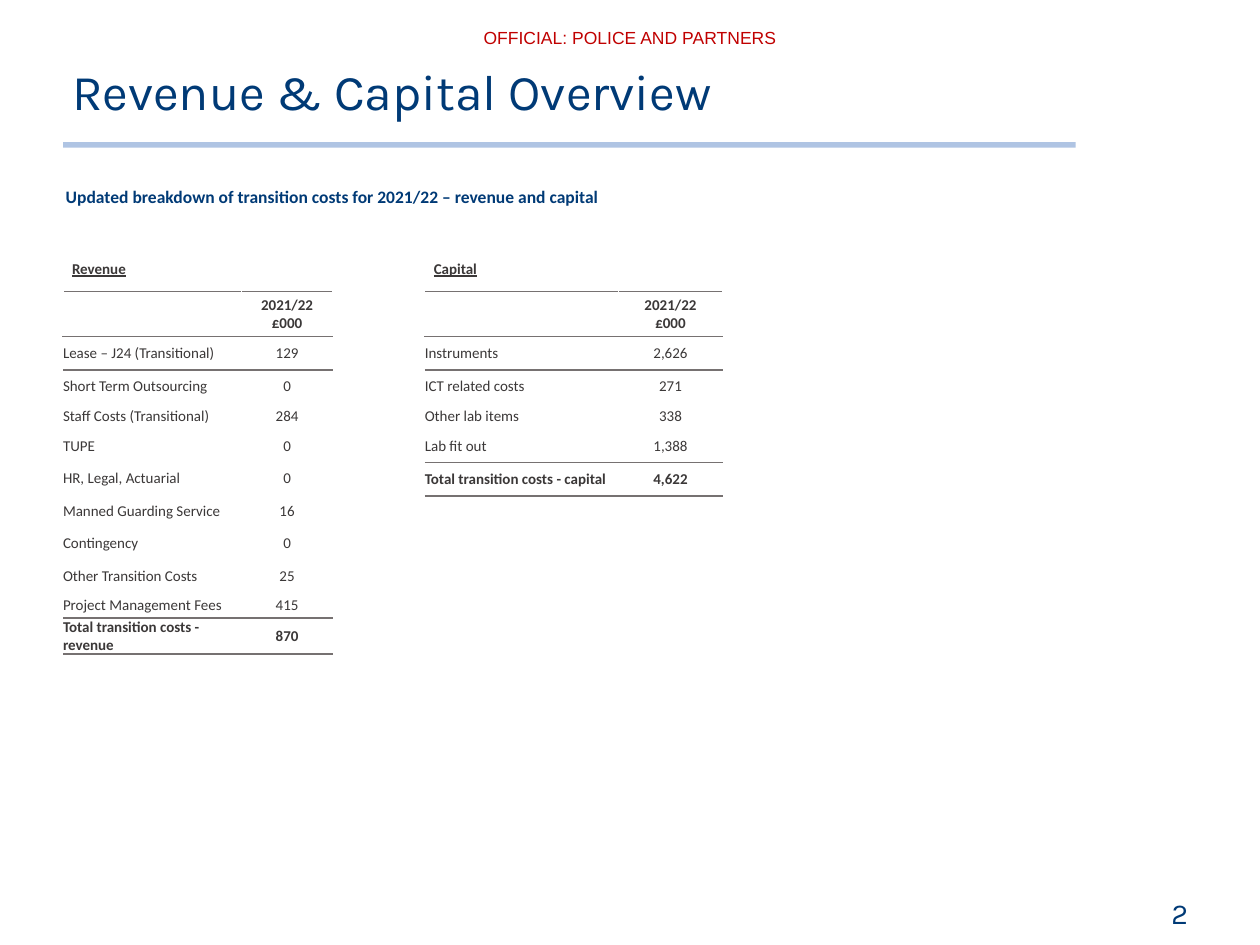
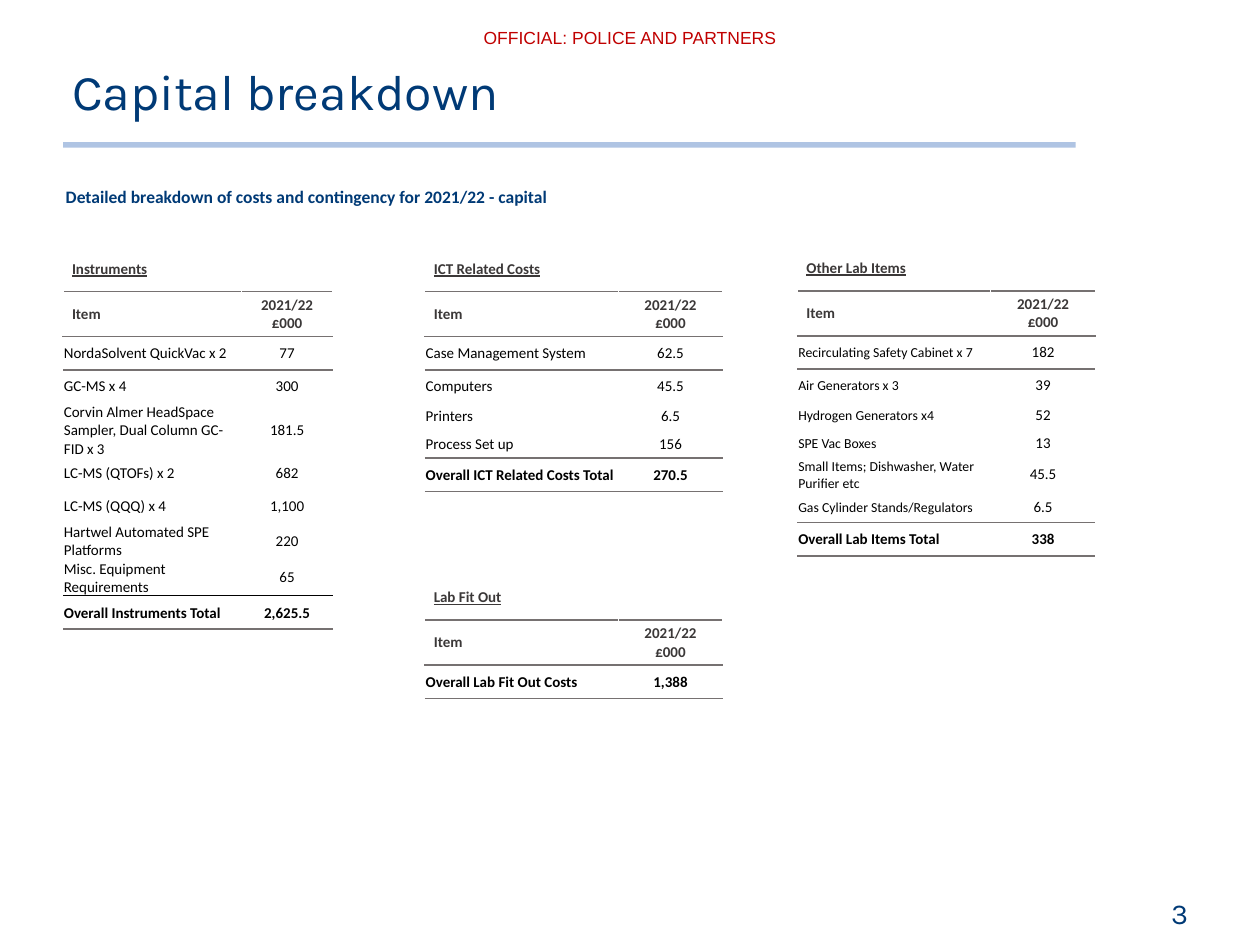
from dataclasses import dataclass

from lxml import etree
from pptx import Presentation
from pptx.dml.color import RGBColor
from pptx.enum.shapes import MSO_CONNECTOR as Connector
from pptx.enum.text import MSO_ANCHOR as Anchor, MSO_AUTO_SIZE as AutoSize, PP_ALIGN as Align
from pptx.oxml.ns import qn
from pptx.util import Inches, Pt


@dataclass(frozen=True)
class Theme:
    navy: str = "003A76"
    red: str = "C00000"
    band: str = "9CB6DC"
    grey: str = "3B3838"
    rule: str = "767171"
    black: str = "000000"
    white: str = "FFFFFF"
    title_font: str = "Karla"
    body_font: str = "Calibri"
    marking_font: str = "Arial"
    title_size: float = 40
    number_size: float = 23.1
    text_size: float = 14
    cell_size: float = 12
    small_size: float = 11


THEME = Theme()

# Content
MARKING = "OFFICIAL: POLICE AND PARTNERS"
PERIOD = ("2021/22", "£000")

REVENUE = [
    ("Lease – J24 (Transitional)", "129"),
    ("Short Term Outsourcing", "0"),
    ("Staff Costs (Transitional)", "284"),
    ("TUPE", "0"),
    ("HR, Legal, Actuarial", "0"),
    ("Manned Guarding Service", "16"),
    ("Contingency", "0"),
    ("Other Transition Costs", "25"),
    ("Project Management Fees", "415"),
    ("Total transition costs - revenue", "870"),
]
CAPITAL = [
    ("Instruments", "2,626"),
    ("ICT related costs", "271"),
    ("Other lab items", "338"),
    ("Lab fit out", "1,388"),
    ("Total transition costs - capital", "4,622"),
]
INSTRUMENTS = [
    ("NordaSolvent QuickVac x 2", "77"),
    ("GC-MS x 4", "300"),
    ("Corvin Almer HeadSpace Sampler, Dual Column GC-FID x 3", "181.5"),
    ("LC-MS (QTOFs) x 2", "682"),
    ("LC-MS (QQQ) x 4", "1,100"),
    ("Hartwel Automated SPE Platforms", "220"),
    ("Misc. Equipment Requirements", "65"),
    ("Overall Instruments Total", "2,625.5"),
]
ICT = [
    ("Case Management System", "62.5"),
    ("Computers", "45.5"),
    ("Printers", "6.5"),
    ("Process Set up", "156"),
    ("Overall ICT Related Costs Total", "270.5"),
]
LAB_ITEMS = [
    ("Recirculating Safety Cabinet x 7", "182"),
    ("Air Generators x 3", "39"),
    ("Hydrogen Generators x4", "52"),
    ("SPE Vac Boxes", "13"),
    ("Small Items; Dishwasher, Water Purifier etc", "45.5"),
    ("Gas Cylinder Stands/Regulators", "6.5"),
    ("Overall Lab Items Total", "338"),
]
FIT_OUT = [("Overall Lab Fit Out Costs", "1,388")]

# Table columns on the page, and the two column widths used
LEFT, MIDDLE, RIGHT, TOP = 0.7, 4.72, 8.86, 2.74
NARROW, WIDE = (1.98, 1.02), (2.15, 1.16)
HEAD_HEIGHT, EDGE_HEIGHT, ROW_HEIGHT = 0.5, 0.37, 0.36

# Body rows are ROW_HEIGHT high, the first and last EDGE_HEIGHT; "heights" lists exceptions
DETAIL = {"item": "Item", "color": THEME.black, "inset": 0.01}
PAGES = [
    {
        "number": "2",
        "title": "Revenue & Capital Overview",
        "subtitle": "Updated breakdown of transition costs for 2021/22 – revenue and capital",
        "tables": [
            {"name": "Revenue", "rows": REVENUE, "at": (LEFT, TOP), "widths": NARROW,
             "heights": {2: 0.31, 8: 0.29}},
            {"name": "Capital", "rows": CAPITAL, "at": (MIDDLE, TOP), "widths": WIDE,
             "heights": {2: 0.31}},
        ],
    },
    {
        "number": "3",
        "title": "Capital breakdown",
        "subtitle": "Detailed breakdown of costs and contingency for 2021/22 - capital",
        "tables": [
            {"name": "Instruments", "rows": INSTRUMENTS, "at": (LEFT, TOP), "widths": NARROW,
             "heights": {2: 0.31, 6: 0.38}, "total_line": (THEME.black, 1), **DETAIL},
            {"name": "ICT Related Costs", "rows": ICT, "at": (MIDDLE, TOP), "widths": WIDE,
             "heights": {2: 0.31, 3: 0.31}, **DETAIL},
            {"name": "Other Lab Items", "rows": LAB_ITEMS, "at": (RIGHT, 2.73), "widths": WIDE,
             "heights": {2: 0.31, 3: 0.31, 4: 0.31, 5: 0.35},
             "label_size": THEME.small_size, **DETAIL},
            {"name": "Lab Fit Out", "rows": FIT_OUT, "at": (MIDDLE, 6.39), "widths": WIDE,
             **DETAIL},
        ],
    },
]


# Text helpers
def set_all(target, values):
    for name, value in values.items():
        setattr(target, name, value)


def write(frame, lines, size, color, font=THEME.body_font, align=Align.LEFT, **style):
    for index, line in enumerate(lines):
        para = frame.add_paragraph() if index else frame.paragraphs[0]
        para.alignment = align
        span = para.add_run()
        span.text = line
        set_all(span.font, {"name": font, "size": Pt(size), **style})
        span.font.color.rgb = RGBColor.from_string(color)


def add_text(page, place, text, size, color, wrap=True, inset=0.1, **style):
    frame = page.shapes.add_textbox(*map(Inches, place)).text_frame
    set_all(frame, {"word_wrap": wrap, "margin_left": Inches(inset),
                    "margin_right": Inches(inset)})
    write(frame, [text], size, color, **style)


# Shared page parts
def add_frame(page, content):
    add_text(page, (5.26, 0.25, 3.48, 0.34), MARKING, THEME.text_size, THEME.red,
             wrap=False, font=THEME.marking_font, align=Align.CENTER)

    band = page.shapes.add_connector(Connector.STRAIGHT, *map(Inches, (0.7, 1.61, 11.95, 1.61)))
    band.line.width = Pt(4.5)
    band.line.color.rgb = RGBColor.from_string(THEME.band)
    color = band.line._get_or_add_ln().find(".//" + qn("a:srgbClr"))
    etree.SubElement(color, qn("a:alpha"), val="80000")
    etree.SubElement(band._element.spPr, qn("a:effectLst"))

    add_text(page, (0.69, 2.02, 12.61, 0.71), content["subtitle"], THEME.text_size,
             THEME.navy, inset=0.04, bold=True)

    title = page.shapes.title
    set_all(title, {"left": Inches(0.7), "top": Inches(0.58),
                    "width": Inches(12.25), "height": Inches(1.17)})
    set_all(title.text_frame, {"vertical_anchor": Anchor.TOP, "word_wrap": True,
                               "auto_size": AutoSize.NONE})
    write(title.text_frame, [content["title"]], THEME.title_size, THEME.navy, THEME.title_font)
    title.text_frame.paragraphs[0].line_spacing = 1.06

    add_text(page, (10.03, 9.9, 3.27, 0.39), content["number"], THEME.number_size,
             THEME.navy, font=THEME.title_font, align=Align.RIGHT)


# Tables
def set_borders(cell, borders):
    props = cell._tc.get_or_add_tcPr()
    for side in "LRTB":
        if side in borders:
            color, width = borders[side]
            line = etree.SubElement(props, qn("a:ln" + side), w=str(Pt(width)))
            fill = etree.SubElement(line, qn("a:solidFill"))
            etree.SubElement(fill, qn("a:srgbClr"), val=color)


def add_cost_table(page, name, rows, at, widths, heights=None, item="", color=THEME.grey,
                   inset=0, label_size=THEME.cell_size, total_line=(THEME.rule, 1.5)):
    last = len(rows) - 1
    body = [EDGE_HEIGHT if i in (0, last) else (heights or {}).get(i, ROW_HEIGHT)
            for i in range(len(rows))]
    all_heights = [HEAD_HEIGHT, HEAD_HEIGHT, *body]
    count = len(all_heights)
    place = (*at, sum(widths), sum(all_heights))
    table = page.shapes.add_table(count, 2, *map(Inches, place)).table
    set_all(table, {"first_row": False, "horz_banding": False})
    table._tbl.tblPr.find(qn("a:tableStyleId")).text = "{2D5ABB26-0587-4C30-8999-92F81FD0307C}"
    for column, width in zip(table.columns, widths):
        column.width = Inches(width)
    for row, height in zip(table.rows, all_heights):
        row.height = Inches(height)

    # Lines below the name, the heading, the last item and the total
    lines = {count - 2: total_line}
    lines.update({i: (THEME.rule, 1.5) for i in (0, 1, count - 1)})
    grid = [([name], []), ([item] if item else [], PERIOD)]
    grid += [([label], [value]) for label, value in rows]

    for r, texts in enumerate(grid):
        for c, text in enumerate(texts):
            cell = table.cell(r, c)
            borders = {"L": (THEME.white, 1), "R": (THEME.white, 1)} if r == 1 else {}
            if r - 1 in lines:
                borders["T"] = lines[r - 1]
            if r in lines:
                borders["B"] = lines[r]
            set_borders(cell, borders)
            cell.fill.background()
            cell.vertical_anchor = Anchor.MIDDLE
            is_head, is_total = r < 2, r == count - 1
            if not is_head:
                set_all(cell, {"margin_left": Inches(inset), "margin_right": Inches(inset),
                               "margin_top": Inches(inset), "margin_bottom": 0})
            write(cell.text_frame, text,
                  label_size if c == 0 and not is_head and not is_total else THEME.cell_size,
                  THEME.grey if is_head else color,
                  align=Align.CENTER if c else Align.LEFT,
                  bold=is_head or is_total, underline=r == 0)


def main():
    deck = Presentation()
    set_all(deck, {"slide_width": Inches(14), "slide_height": Inches(10.5)})
    for content in PAGES:
        page = deck.slides.add_slide(deck.slide_layouts[5])
        add_frame(page, content)
        for table in content["tables"]:
            add_cost_table(page, **table)
    deck.save("out.pptx")


if __name__ == "__main__":
    main()
